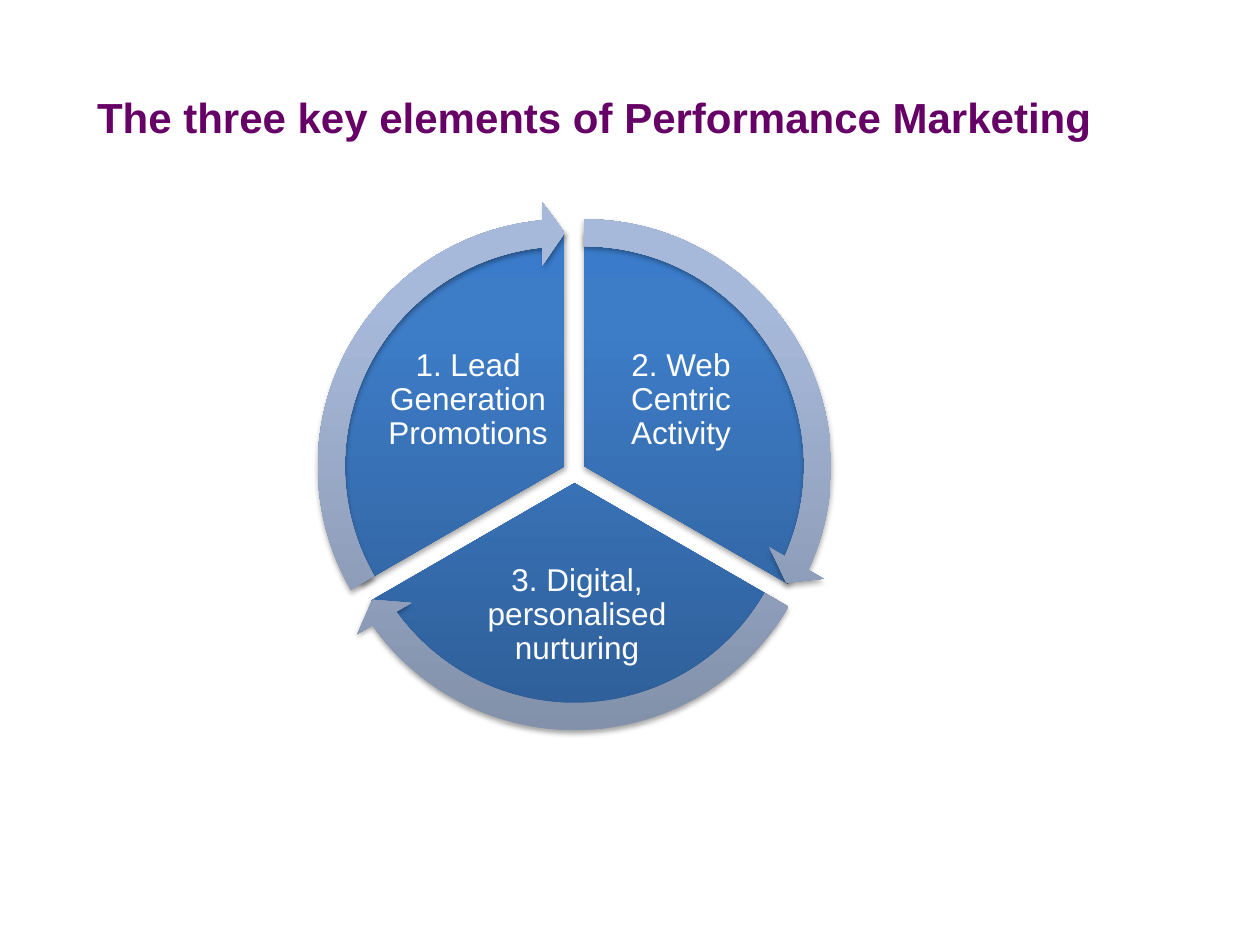
from math import cos, radians, sin

from pptx import Presentation
from pptx.dml.color import RGBColor
from pptx.enum.shapes import MSO_SHAPE
from pptx.enum.text import MSO_ANCHOR, MSO_AUTO_SIZE, PP_ALIGN
from pptx.oxml import parse_xml
from pptx.oxml.ns import nsdecls, qn
from pptx.util import Inches, Pt

COLUMNS, ROWS = 100, 75
SEGMENT_STOPS = [(0, "2F5F99"), (80, "3D7CC7"), (100, "3A7CCB")]
ARROW_STOPS = [(0, "818FA8"), (80, "A7B9DA"), (100, "A7BADC")]


def colour(hex_value):
    return RGBColor.from_string(hex_value)


class CycleSlide:
    """Holds the style and the slide; lengths are grid columns and rows."""

    title_font = dict(name="Arial", size=Pt(24), bold=True)
    label_font = dict(name="Arial", size=Pt(18), bold=False)
    title_frame = dict(word_wrap=True, vertical_anchor=MSO_ANCHOR.TOP,
                       auto_size=MSO_AUTO_SIZE.SHAPE_TO_FIT_TEXT)
    label_frame = dict(word_wrap=True, vertical_anchor=MSO_ANCHOR.MIDDLE,
                       **{f"margin_{side}": Inches(0.03)
                          for side in ("left", "top", "right", "bottom")})

    def __init__(self, deck):
        self.column = deck.slide_width / COLUMNS
        self.row = deck.slide_height / ROWS
        self.slide = deck.slides.add_slide(deck.slide_layouts[5])
        self.cycle = self.slide.shapes.add_group_shape().shapes

    def place(self, left, top, width, height):
        return [round(left * self.column), round(top * self.row),
                round(width * self.column), round(height * self.row)]

    def set_text(self, frame, words, frame_format, font_format, hex_value, align):
        frame.text = words
        paragraph = frame.paragraphs[0]
        paragraph.alignment = align
        for target, values in ((frame, frame_format), (paragraph.font, font_format)):
            for key, value in values.items():
                setattr(target, key, value)
        paragraph.font.color.rgb = colour(hex_value)
        return paragraph

    def title(self, words, *box):
        heading = self.slide.shapes.title
        heading.left, heading.top, heading.width, heading.height = self.place(*box)
        self.set_text(heading.text_frame, words, self.title_frame,
                      self.title_font, "660066", PP_ALIGN.LEFT)

    def label(self, words, *box):
        label = self.cycle.add_textbox(*self.place(*box))
        paragraph = self.set_text(label.text_frame, words, self.label_frame,
                                  self.label_font, "FFFFFF", PP_ALIGN.CENTER)
        paragraph.line_spacing = 0.9

    def round_part(self, kind, centre, size, adjustments, stops):
        x, y = centre
        part = self.cycle.add_shape(
            kind, *self.place(x - size / 2, y - size / 2, size, size))
        for index, value in enumerate(adjustments):
            part.adjustments[index] = value
        part.line.fill.background()
        self.shade(part, stops)

    def shade(self, part, stops):
        """Vertical gradient and a soft shadow below."""
        stop_xml = "".join(
            f'<a:gs pos="{share * 1000}"><a:srgbClr val="{hex_value}"/></a:gs>'
            for share, hex_value in stops)
        outline = part.element.spPr.find(qn("a:ln"))
        outline.addprevious(parse_xml(
            f'<a:gradFill {nsdecls("a")} rotWithShape="1"><a:gsLst>{stop_xml}</a:gsLst>'
            '<a:lin ang="16200000" scaled="0"/></a:gradFill>'))
        outline.addnext(parse_xml(
            f'<a:effectLst {nsdecls("a")}><a:outerShdw blurRad="40000" dist="23000" '
            'dir="5400000" rotWithShape="0"><a:srgbClr val="000000">'
            '<a:alpha val="35000"/></a:srgbClr></a:outerShdw></a:effectLst>'))


def main():
    deck = Presentation()
    deck.slide_width, deck.slide_height = Inches(10), Inches(7.5)
    page = CycleSlide(deck)

    page.title("The three key elements of Performance Marketing", 6.7, 6.8, 83.3, 5)

    # Clockwise from the upper right
    elements = [
        ("2. Web Centric Activity", (47.4, 26.2, 13.3, 11.1)),
        ("3. Digital, personalised nurturing", (35.8, 43.9, 20, 9.8)),
        ("1. Lead Generation Promotions", (30.5, 26.2, 13.3, 11.1)),
    ]

    # Each third is pushed out from the centre; 72 adjustment units are 120 degrees
    arrows = []
    for index, (words, label_box) in enumerate(elements):
        middle = radians(120 * index - 30)
        centre = (45.6 + 0.9 * cos(middle), 37.45 + 0.9 * sin(middle))
        start, end = (162 + 72 * index) % 216, 18 + 72 * index
        page.round_part(MSO_SHAPE.PIE, centre, 37.3, (start, end), SEGMENT_STOPS)
        page.label(words, *label_box)
        arrows.append((centre, (0.051, 3.275, end - 3.27, start, 0.059)))

    # Arrows lie over all segments
    for centre, adjustments in arrows:
        page.round_part(MSO_SHAPE.CIRCULAR_ARROW, centre, 42, adjustments, ARROW_STOPS)

    deck.save("out.pptx")


if __name__ == "__main__":
    main()
